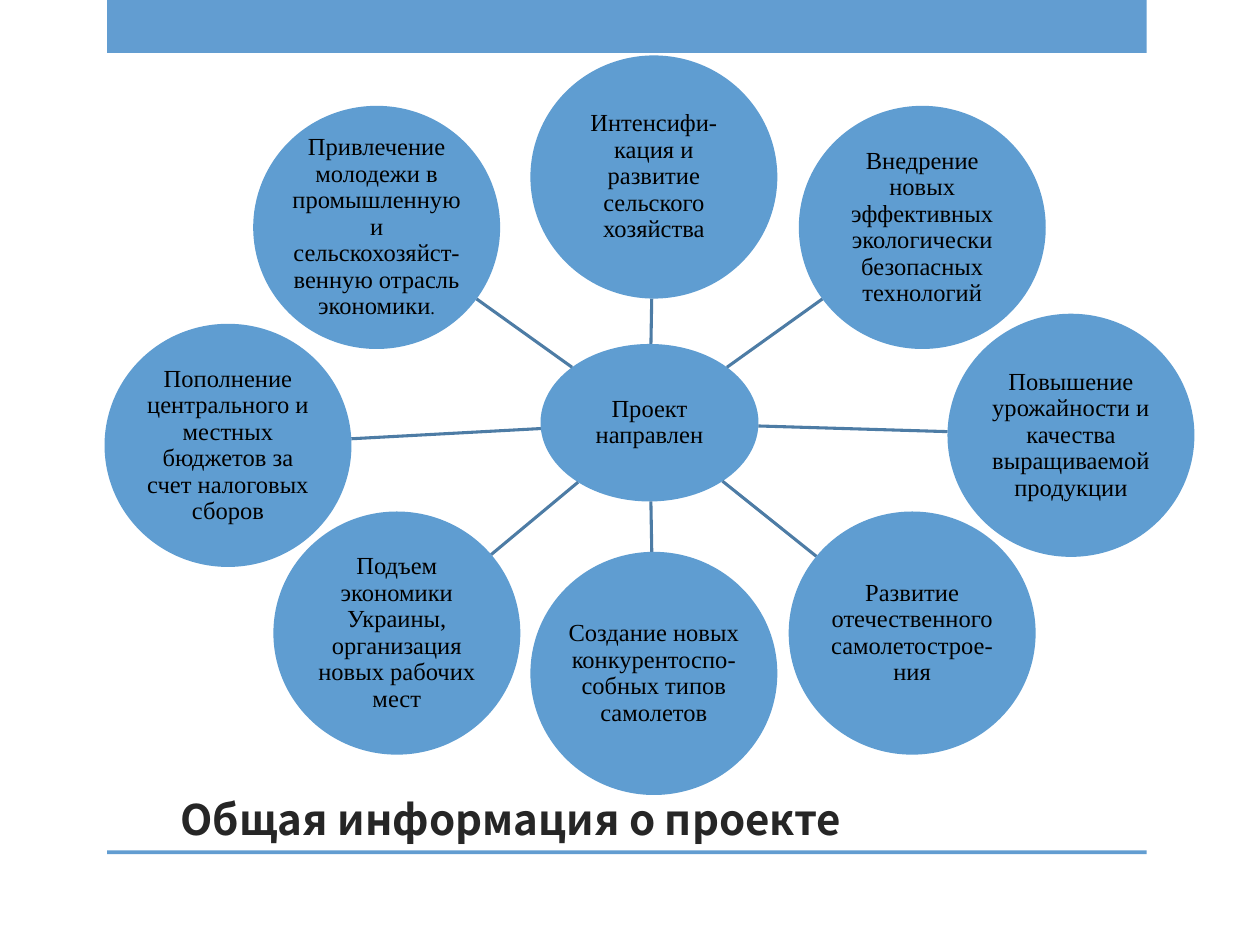
from math import hypot

from lxml import etree
from pptx import Presentation
from pptx.dml.color import RGBColor
from pptx.enum.shapes import MSO_CONNECTOR, MSO_SHAPE
from pptx.enum.text import MSO_ANCHOR, MSO_AUTO_SIZE, PP_ALIGN
from pptx.oxml.ns import qn
from pptx.util import Inches, Pt

RECTANGLE, OVAL = MSO_SHAPE.RECTANGLE, MSO_SHAPE.OVAL
STRAIGHT = MSO_CONNECTOR.STRAIGHT
MIDDLE, BOTTOM = MSO_ANCHOR.MIDDLE, MSO_ANCHOR.BOTTOM
CENTER, JUSTIFY = PP_ALIGN.CENTER, PP_ALIGN.JUSTIFY
NO_AUTOFIT = MSO_AUTO_SIZE.NONE

COLORS = {
    "band": "629DD1",
    "circle": "5F9DD1",
    "spoke": "4D7CA5",
    "title": "262626",
    "text": "000000",
}
TITLE_FONT = {"name": "Noto Sans CJK KR", "size": Pt(24), "bold": True}
CIRCLE_FONT = {"name": "Times New Roman", "size": Pt(14), "bold": False}

HUB_CENTER = (5.155, 3.355)
HUB_SIZE = (1.73, 1.25)
GOAL_SIZE = (1.96, 1.93)
GOALS = [
    (4.21, 0.44, ["Интенсифи-кация и развитие сельского хозяйства"]),
    (6.34, 0.84, ["Внедрение новых эффективных экологически безопасных технологий"]),
    (7.52, 2.49, ["Повышение урожайности и качества выращиваемой продукции"]),
    (6.26, 4.06, ["Развитие отечественного самолетострое-ния"]),
    (4.21, 4.38, ["Создание новых конкурентоспо-собных типов самолетов"]),
    (2.17, 4.06, ["Подъем экономики Украины, организация новых рабочих мест"]),
    (0.83, 2.57, ["Пополнение центрального и местных бюджетов за счет налоговых сборов"]),
    (2.01, 0.84, ["Привлечение молодежи в промышленную и сельскохозяйст-венную "
                  "отрасль экономики", "."]),
]


def set_all(target, values):
    for key, value in values.items():
        setattr(target, key, value)


def edge_point(center, size, toward):
    dx, dy = toward[0] - center[0], toward[1] - center[1]
    scale = 1 / hypot(dx / (size[0] / 2), dy / (size[1] / 2))
    return center[0] + dx * scale, center[1] + dy * scale


class ProjectSlide:
    def __init__(self, slide):
        self.slide = slide

    def color(self, name):
        return RGBColor.from_string(COLORS[name])

    def format_font(self, font, values, color):
        set_all(font, values)
        font.color.rgb = self.color(color)

    def frame(self, shape, anchor, inset_x, inset_y):
        set_all(shape.text_frame, {
            "word_wrap": True, "auto_size": NO_AUTOFIT, "vertical_anchor": anchor,
            "margin_left": Inches(inset_x), "margin_right": Inches(inset_x),
            "margin_top": Inches(inset_y), "margin_bottom": Inches(inset_y),
        })
        return shape.text_frame.paragraphs[0]

    def title(self, text, left, top, width, height):
        title = self.slide.shapes.title
        set_all(title, {"left": Inches(left), "top": Inches(top),
                        "width": Inches(width), "height": Inches(height)})
        paragraph = self.frame(title, BOTTOM, 0.1, 0.05)
        paragraph.alignment = JUSTIFY
        properties = paragraph._p.get_or_add_pPr()
        properties.set("marL", "0")
        properties.set("indent", str(Inches(0.5)))
        run = paragraph.add_run()
        run.text = text
        self.format_font(run.font, TITLE_FONT, "title")

    def shape(self, kind, color, left, top, width, height):
        shape = self.slide.shapes.add_shape(
            kind, Inches(left), Inches(top), Inches(width), Inches(height))
        shape.shadow.inherit = False
        shape.fill.solid()
        shape.fill.fore_color.rgb = self.color(color)
        shape.line.fill.background()
        return shape

    def band(self, top, height):
        self.shape(RECTANGLE, "band", 0.85, top, 8.25, height)

    def circle(self, center, size, parts):
        left, top = center[0] - size[0] / 2, center[1] - size[1] / 2
        circle = self.shape(OVAL, "circle", left, top, *size)
        paragraph = self.frame(circle, MIDDLE, 0.01, 0.01)
        set_all(paragraph, {"alignment": CENTER, "line_spacing": 0.9})
        for part in parts:
            run = paragraph.add_run()
            run.text = part
            self.format_font(run.font, CIRCLE_FONT, "text")
            if part == ".":
                run.font.size = Pt(10.5)

    def spoke(self, goal_center):
        start = edge_point(HUB_CENTER, HUB_SIZE, goal_center)
        end = edge_point(goal_center, GOAL_SIZE, HUB_CENTER)
        spoke = self.slide.shapes.add_connector(
            STRAIGHT, *(Inches(value) for value in start + end))
        spoke.line.color.rgb = self.color("spoke")
        spoke.line.width = Pt(1.75)
        etree.SubElement(spoke._element.spPr, qn("a:effectLst"))


def main():
    presentation = Presentation()
    presentation.slide_width = Inches(10)
    presentation.slide_height = Inches(7.5)
    title_only = presentation.slide_layouts[5]
    page = ProjectSlide(presentation.slides.add_slide(title_only))

    page.band(0, 0.42)
    page.band(6.75, 0.03)
    page.title("Общая информация о проекте", 0.83, 6.35, 7.42, 0.4)
    page.circle(HUB_CENTER, HUB_SIZE, ["Проект направлен"])
    for left, top, parts in GOALS:
        goal_center = (left + GOAL_SIZE[0] / 2, top + GOAL_SIZE[1] / 2)
        page.spoke(goal_center)
        page.circle(goal_center, GOAL_SIZE, parts)

    presentation.save("out.pptx")


if __name__ == "__main__":
    main()
